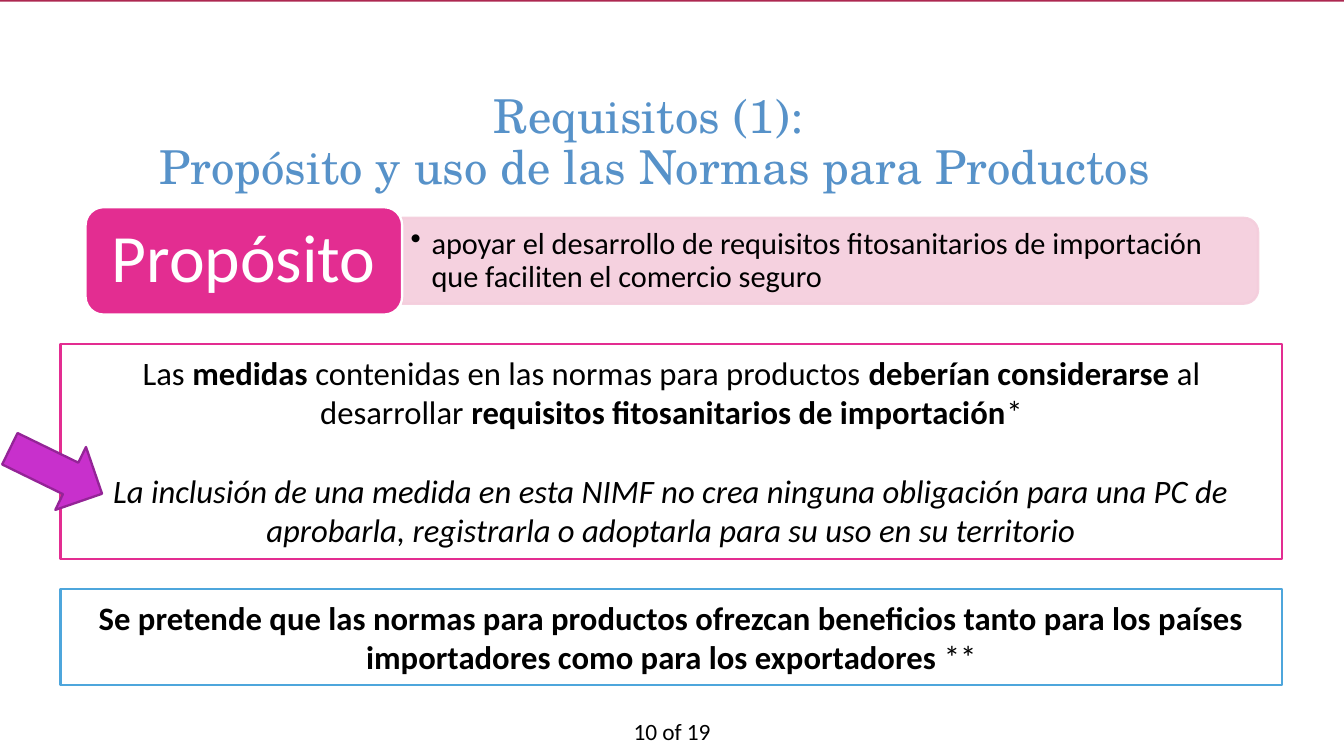
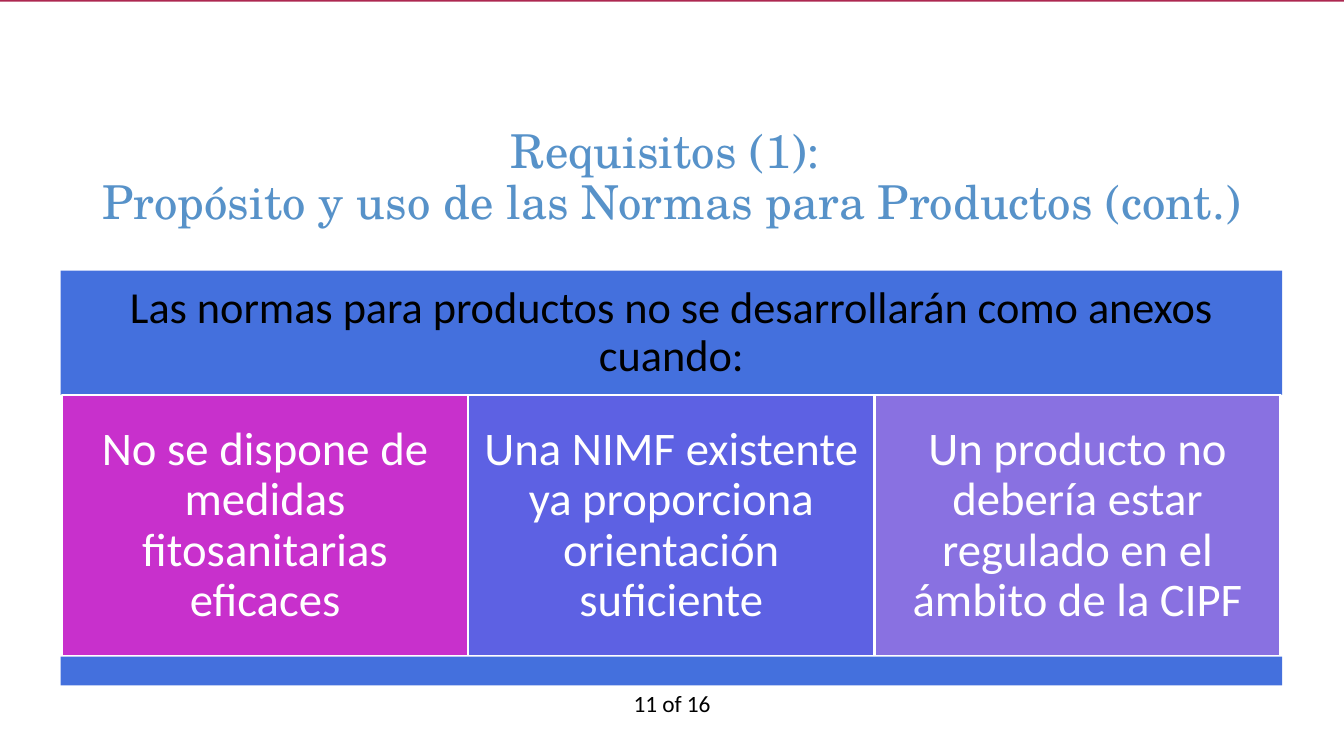
from lxml import etree
from pptx import Presentation
from pptx.dml.color import RGBColor
from pptx.enum.shapes import MSO_SHAPE
from pptx.enum.text import MSO_ANCHOR, PP_ALIGN
from pptx.oxml.ns import qn
from pptx.util import Pt

RECT, ROUND = MSO_SHAPE.RECTANGLE, MSO_SHAPE.ROUNDED_RECTANGLE
TAB, ARROW = MSO_SHAPE.ROUND_2_SAME_RECTANGLE, MSO_SHAPE.RIGHT_ARROW
TOP, MIDDLE = MSO_ANCHOR.TOP, MSO_ANCHOR.MIDDLE
LEFT, CENTER = PP_ALIGN.LEFT, PP_ALIGN.CENTER

W, H = 576, 324
MARGIN, CONTENT_W = 26, 523.5
COLORS = {
    "band": "AD2851", "title": "5792C9", "black": "000000", "white": "FFFFFF",
    "pink": "E32D91", "pale": "F4CDDC", "purple": "C830CC", "plum": "942497",
    "sky": "4EA6DC", "blue": "4470DD", "indigo": "5D61E3", "lilac": "8971E1",
}
TITLE = {"name": "TeX Gyre Schola", "size": Pt(20)}
BODY = {"name": "Calibri", "size": Pt(14)}
BULLET = {"name": "Calibri", "size": Pt(13)}
LABEL = {"name": "Calibri", "size": Pt(29)}
HEADING = {"name": "Calibri", "size": Pt(19)}
CARD = {"name": "Calibri", "size": Pt(20)}
FOOTER = {"name": "Calibri", "size": Pt(10)}
TIGHT = {"line_spacing": 0.9}


def rgb(name):
    """Return the named colour."""
    return RGBColor.from_string(COLORS[name])


def add_box(s, kind, box, fill, line=None):
    """Add a filled shape, outlined only when a line colour is given."""
    sp = s.shapes.add_shape(kind, *map(Pt, box))
    sp.shadow.inherit = False
    sp.fill.solid()
    sp.fill.fore_color.rgb = rgb(fill)
    if line:
        sp.line.color.rgb = rgb(line)
        sp.line.width = Pt(1)
    else:
        sp.line.fill.background()
    return sp


def add_runs(p, runs, font, color):
    """Write (text, extra font values) pairs into a paragraph."""
    for text, extra in runs:
        for i, part in enumerate(text.split("\n")):
            if i:
                p.add_line_break()
            r = p.add_run()
            r.text = part
            r.font.color.rgb = rgb(color)
            for key, value in {**font, **extra}.items():
                setattr(r.font, key, value)


def write(sp, paragraphs, font, color="black", anchor=MIDDLE, inset=(7.2, 3.6),
          para=None, wrap=True):
    """Fill a shape with paragraphs, each a string or a list of runs."""
    tf = sp.text_frame
    frame = {"word_wrap": wrap, "vertical_anchor": anchor,
             "margin_left": Pt(inset[0]), "margin_right": Pt(inset[0]),
             "margin_top": Pt(inset[1]), "margin_bottom": Pt(inset[1])}
    for key, value in frame.items():
        setattr(tf, key, value)
    for i, runs in enumerate(paragraphs):
        p = tf.add_paragraph() if i else tf.paragraphs[0]
        for key, value in {"alignment": CENTER, **(para or {})}.items():
            setattr(p, key, value)
        add_runs(p, [(runs, {})] if isinstance(runs, str) else runs, font, color)
    return tf


def add_text(s, box, paragraphs, font, **options):
    """Add a text box."""
    return write(s.shapes.add_textbox(*map(Pt, box)), paragraphs, font, **options)


def make_translucent(sp, percent):
    """Set the opacity of the fill and outline of a shape."""
    for clr in sp._element.spPr.iter(qn("a:srgbClr")):
        etree.SubElement(clr, qn("a:alpha"), val=str(percent * 1000))


def add_bullet(p, indent):
    """Give a paragraph a hanging bullet."""
    pPr = p._p.get_or_add_pPr()
    pPr.set("marL", str(Pt(indent)))
    pPr.set("indent", str(-Pt(indent)))
    etree.SubElement(pPr, qn("a:buChar"), char="•")


def new_slide(prs, title, title_box, footer, footer_top):
    """Add a slide with the top band, title and page count."""
    s = prs.slides.add_slide(prs.slide_layouts[6])
    add_box(s, RECT, (0, -2.9, W, 3.6), "band")
    add_text(s, title_box, [title], TITLE, color="title", para=TIGHT)
    add_text(s, ((W - 48) / 2, footer_top, 48, 32), [footer], FOOTER,
             anchor=TOP, wrap=False)
    return s


def add_purpose(s, box, label, detail):
    """Place a label beside the rounded bar that explains it."""
    x, y, w, h = box
    label_w, bar_h = w * 0.27, h * 0.8
    bar_w = w - label_w
    bar_x = x + label_w
    bar = add_box(s, TAB, (bar_x + (bar_w - bar_h) / 2, y + (h - bar_w) / 2,
                           bar_h, bar_w), "pale", "pale")
    bar.rotation = 90
    make_translucent(bar, 90)
    tf = add_text(s, (bar_x, y + (h - 33) / 2, bar_w - 2, 33), [detail], BULLET,
                  inset=(3.6, 2.2), para={"alignment": LEFT, **TIGHT})
    add_bullet(tf.paragraphs[0], 9)
    sp = add_box(s, ROUND, (x, y, label_w, h), "pink", "white")
    write(sp, [label], LABEL, color="white", inset=(4, 4), para=TIGHT)


def add_statement(s, box, paragraphs, line):
    """Place an outlined statement and separate its paragraphs by one line."""
    sp = add_box(s, RECT, box, "white", line)
    tf = write(sp, paragraphs, BODY, anchor=TOP)
    for p in tf.paragraphs[1:]:
        p.space_before = Pt(17)


def add_pointer(s, box):
    """Place the tilted arrow."""
    add_box(s, ARROW, box, "purple", "plum").rotation = 26


def add_cases(s, box, heading, cases):
    """Place a heading bar, equal cards and a closing bar."""
    x, y, w, h = box
    head_h, card_h, foot_h = h * 0.3, h * 0.63, h * 0.07
    edge = 0.6
    card_w = (w - 2 * edge) / len(cases)
    head = add_box(s, RECT, (x, y, w, head_h), "blue")
    write(head, [heading], HEADING, inset=(5.8, 5.8), para=TIGHT)
    for i, (text, fill) in enumerate(cases):
        card = add_box(s, RECT, (x + edge + i * card_w, y + head_h, card_w, card_h),
                       fill, "white")
        write(card, [text], CARD, color="white", inset=(5.8, 5.8), para=TIGHT)
    add_box(s, RECT, (x, y + head_h + card_h, w, foot_h), "blue")


def build_purpose_slide(prs):
    """Build the slide on the purpose of the standards."""
    bold = {"bold": True}
    s = new_slide(prs, "Requisitos (1): \nPropósito y uso de las Normas para Productos",
                  (-7.2, 34.6, W, 54), "10 of 19", 303.8)
    add_purpose(s, (36.7, 88.8, 502.5, 46), "Propósito",
                "apoyar el desarrollo de requisitos fitosanitarios de importación "
                "que faciliten el comercio seguro")
    add_statement(s, (MARGIN, 147.6, CONTENT_W, 92), [
        [("Las ", {}), ("medidas ", bold),
         ("contenidas en las normas para productos ", {}),
         ("deberían considerarse ", bold), ("al desarrollar ", {}),
         ("requisitos fitosanitarios de importación", bold), ("*", {})],
        [("La inclusión de una medida en esta NIMF no crea ninguna obligación para "
          "una PC de aprobarla, registrarla o adoptarla para su uso en su territorio",
          {"italic": True})],
    ], "pink")
    add_pointer(s, (2, 187, 44, 30))
    add_statement(s, (MARGIN, 252.6, CONTENT_W, 41), [
        [("Se pretende que las normas para productos ofrezcan beneficios tanto para "
          "los países importadores como para los exportadores ", bold), ("**", {})],
    ], "sky")


def build_cases_slide(prs):
    """Build the slide on when standards are not developed."""
    s = new_slide(
        prs, "Requisitos (1): \nPropósito y uso de las Normas para Productos (cont.)",
        (0, 49.7, W, 54), "11 of 16", 291.6)
    add_cases(s, (MARGIN, 116, CONTENT_W, 177.8),
              "Las normas para productos no se desarrollarán como anexos cuando:", [
                  ("No se dispone de medidas fitosanitarias eficaces", "purple"),
                  ("Una NIMF existente ya proporciona orientación suficiente", "indigo"),
                  ("Un producto no debería estar regulado en el ámbito de la CIPF",
                   "lilac"),
              ])


def main():
    """Build and save the presentation."""
    prs = Presentation()
    prs.slide_width, prs.slide_height = Pt(W), Pt(H)
    build_purpose_slide(prs)
    build_cases_slide(prs)
    prs.save("out.pptx")


if __name__ == "__main__":
    main()
